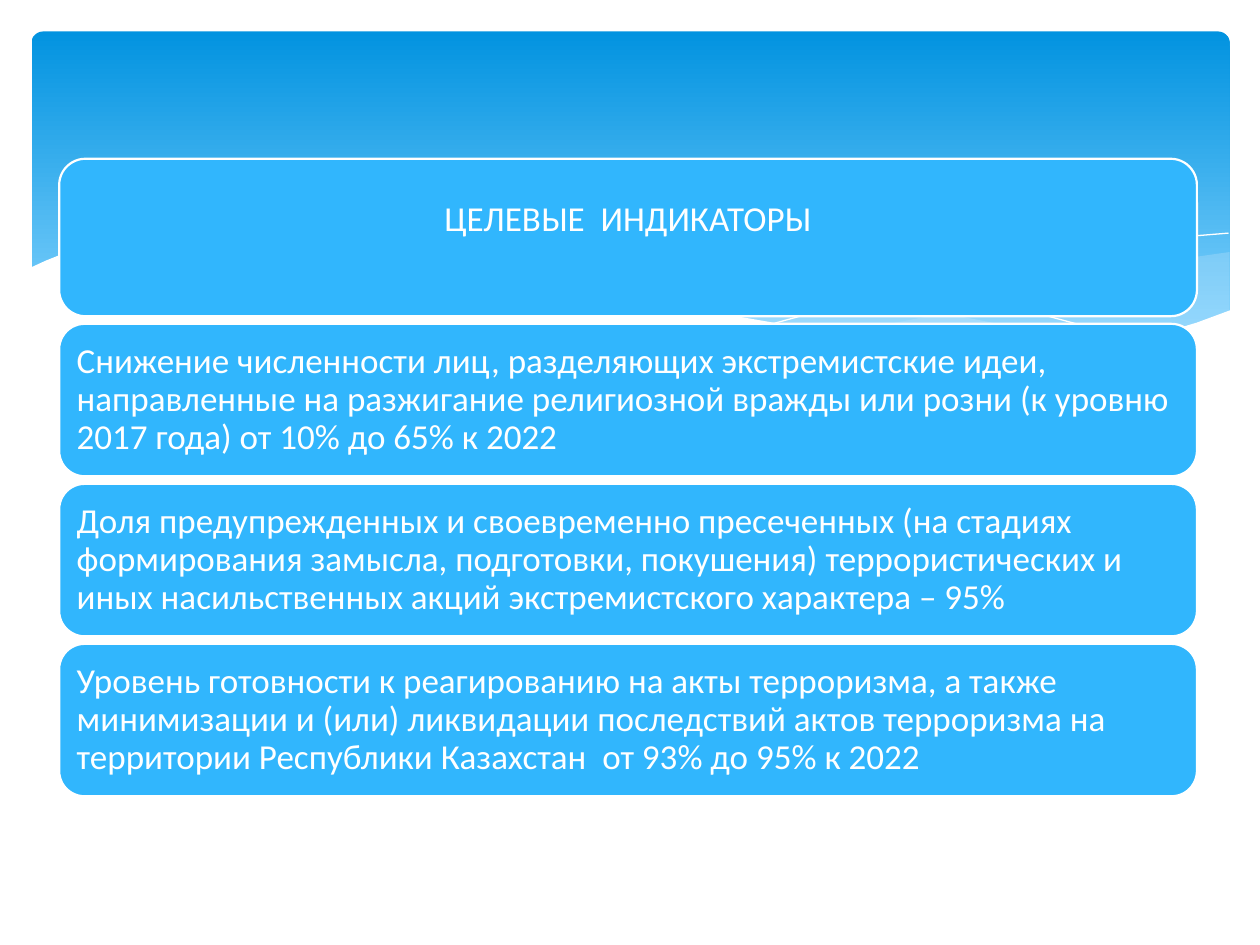
from lxml import etree
from pptx import Presentation
from pptx.dml.color import RGBColor
from pptx.enum.shapes import MSO_SHAPE
from pptx.enum.text import MSO_ANCHOR, PP_ALIGN
from pptx.oxml.ns import qn
from pptx.util import Inches, Pt

ROUNDED = MSO_SHAPE.ROUNDED_RECTANGLE
MIDDLE = MSO_ANCHOR.MIDDLE
LEFT, CENTER = PP_ALIGN.LEFT, PP_ALIGN.CENTER
WHITE, PANEL_BLUE, WAVE_BLUE = "FFFFFF", "31B6FD", "C6E7FC"


def color(hex_string):
    return RGBColor.from_string(hex_string)


def add_outline(slide, points, closed):
    corners = [(Inches(x), Inches(y)) for x, y in points]
    builder = slide.shapes.build_freeform(*corners[0])
    builder.add_line_segments(corners[1:], close=closed)
    shape = builder.convert_to_shape()
    shape.shadow.inherit = False
    return shape


presentation = Presentation()
presentation.slide_width = Inches(10)
presentation.slide_height = Inches(7.5)
slide = presentation.slides.add_slide(presentation.slide_layouts[6])

# Gradient header
header = slide.shapes.add_shape(ROUNDED, Inches(0.25), Inches(0.25), Inches(9.51), Inches(2.7))
header.adjustments[0] = 0.034
header.shadow.inherit = False
header.line.fill.background()
header.fill.gradient()
header.fill.gradient_angle = 270
for stop, position, shade in zip(header.fill.gradient_stops, (0, 0.9), ("0293E0", "83D3FE")):
    stop.position = position
    stop.color.rgb = color(shade)

# Translucent waves: opacity in percent, outline
right_wave = [
    (9.76, 2), (9.48, 2.04), (9.21, 2.1), (8.91, 2.16), (8.61, 2.23), (8.05, 2.37),
    (7.53, 2.48), (7.06, 2.57), (6.61, 2.65), (6.91, 2.69), (7.19, 2.72), (7.45, 2.75),
    (7.69, 2.77), (8.03, 2.78), (8.35, 2.77), (8.63, 2.75), (8.89, 2.72), (9.13, 2.67),
    (9.35, 2.62), (9.49, 2.57), (9.76, 2.47),
]
middle_wave = [
    (8.93, 2.73), (8.66, 2.69), (8.07, 2.6), (7.41, 2.47), (6.68, 2.31), (6.29, 2.22),
    (5.98, 2.14), (5.69, 2.08), (5.41, 2.03), (5.14, 1.98), (4.89, 1.94), (4.42, 1.89),
    (3.99, 1.86), (3.61, 1.85), (3.28, 1.87), (2.86, 1.91), (3.23, 1.96), (3.62, 2.03),
    (4.04, 2.11), (4.49, 2.22), (5.3, 2.4), (5.84, 2.52), (6.18, 2.58), (6.5, 2.64),
    (6.8, 2.68), (7.09, 2.72), (7.36, 2.75), (7.61, 2.77), (7.96, 2.78), (8.28, 2.78),
    (8.57, 2.77), (8.76, 2.75),
]
for points, opacity in ((right_wave, 29), (middle_wave, 40)):
    wave = add_outline(slide, points, True)
    wave.fill.solid()
    wave.fill.fore_color.rgb = color(WAVE_BLUE)
    wave.line.fill.background()
    shade = wave.fill._xPr.find(qn("a:solidFill"))[0]
    etree.SubElement(shade, qn("a:alpha"), val=str(opacity * 1000))

# White hairlines
falling_line = [
    (3.09, 1.95), (3.28, 1.92), (3.53, 1.89), (3.87, 1.87), (4.33, 1.87), (4.69, 1.89),
    (5.1, 1.92), (5.56, 1.97), (6.08, 2.04), (6.65, 2.13), (7.27, 2.26), (7.95, 2.41),
    (8.69, 2.61), (9.07, 2.72),
]
rising_line = [
    (6.13, 2.57), (6.53, 2.46), (6.95, 2.35), (7.48, 2.23), (8.06, 2.1), (8.66, 1.99),
    (8.95, 1.94), (9.24, 1.9), (9.51, 1.87), (9.75, 1.85),
]
for points in (falling_line, rising_line):
    hairline = add_outline(slide, points, False)
    hairline.fill.background()
    hairline.line.color.rgb = color(WHITE)
    hairline.line.width = Pt(0)

# White wave that cuts off the header
white_wave = [
    (9.77, 2.46), (9.5, 2.56), (9.2, 2.65), (8.87, 2.71), (8.5, 2.75), (8.09, 2.77),
    (7.61, 2.75), (7.08, 2.7), (6.48, 2.62), (5.79, 2.5), (5.03, 2.33), (4.47, 2.2),
    (3.91, 2.07), (3.4, 1.97), (2.92, 1.9), (2.5, 1.86), (2.11, 1.84), (1.77, 1.84),
    (1.46, 1.85), (1.19, 1.87), (0.95, 1.91), (0.76, 1.95), (0.59, 1.99), (0.46, 2.03),
    (0.36, 2.07), (0.23, 2.13), (0.23, 3.29), (9.77, 3.29),
]
cutoff = add_outline(slide, white_wave, True)
cutoff.fill.solid()
cutoff.fill.fore_color.rgb = color(WHITE)
cutoff.line.fill.background()

# Stacked panels: height, bottom inset, alignment, text
panels = [
    (1.25, 0.35, CENTER, "ЦЕЛЕВЫЕ  ИНДИКАТОРЫ"),
    (1.21, 0.08, LEFT, "Снижение численности лиц, разделяющих экстремистские идеи, "
     "направленные на разжигание религиозной вражды или розни "
     "(к уровню 2017 года) от 10% до 65% к 2022"),
    (1.21, 0.08, LEFT, "Доля предупрежденных и своевременно пресеченных (на стадиях "
     "формирования замысла, подготовки, покушения) террористических и иных "
     "насильственных акций экстремистского характера – 95%"),
    (1.21, 0.08, LEFT, "Уровень готовности к реагированию на акты терроризма, а также "
     "минимизации и (или) ликвидации последствий актов терроризма на "
     "территории Республики Казахстан  от 93% до 95% к 2022"),
]
top, gap = 1.26, 0.06
for height, bottom_inset, alignment, text in panels:
    panel = slide.shapes.add_shape(ROUNDED, Inches(0.47), Inches(top), Inches(9.03), Inches(height))
    panel.shadow.inherit = False
    panel.fill.solid()
    panel.fill.fore_color.rgb = color(PANEL_BLUE)
    panel.line.color.rgb = color(WHITE)
    panel.line.width = Pt(1.25)
    frame = panel.text_frame
    frame.word_wrap = True
    frame.vertical_anchor = MIDDLE
    frame.margin_left = frame.margin_right = frame.margin_top = Inches(0.08)
    frame.margin_bottom = Inches(bottom_inset)
    paragraph = frame.paragraphs[0]
    paragraph.alignment = alignment
    paragraph.line_spacing = 0.9
    run = paragraph.add_run()
    run.text = text
    run.font.name = "Calibri"
    run.font.size = Pt(20)
    run.font.color.rgb = color(WHITE)
    top += height + gap

presentation.save("out.pptx")
